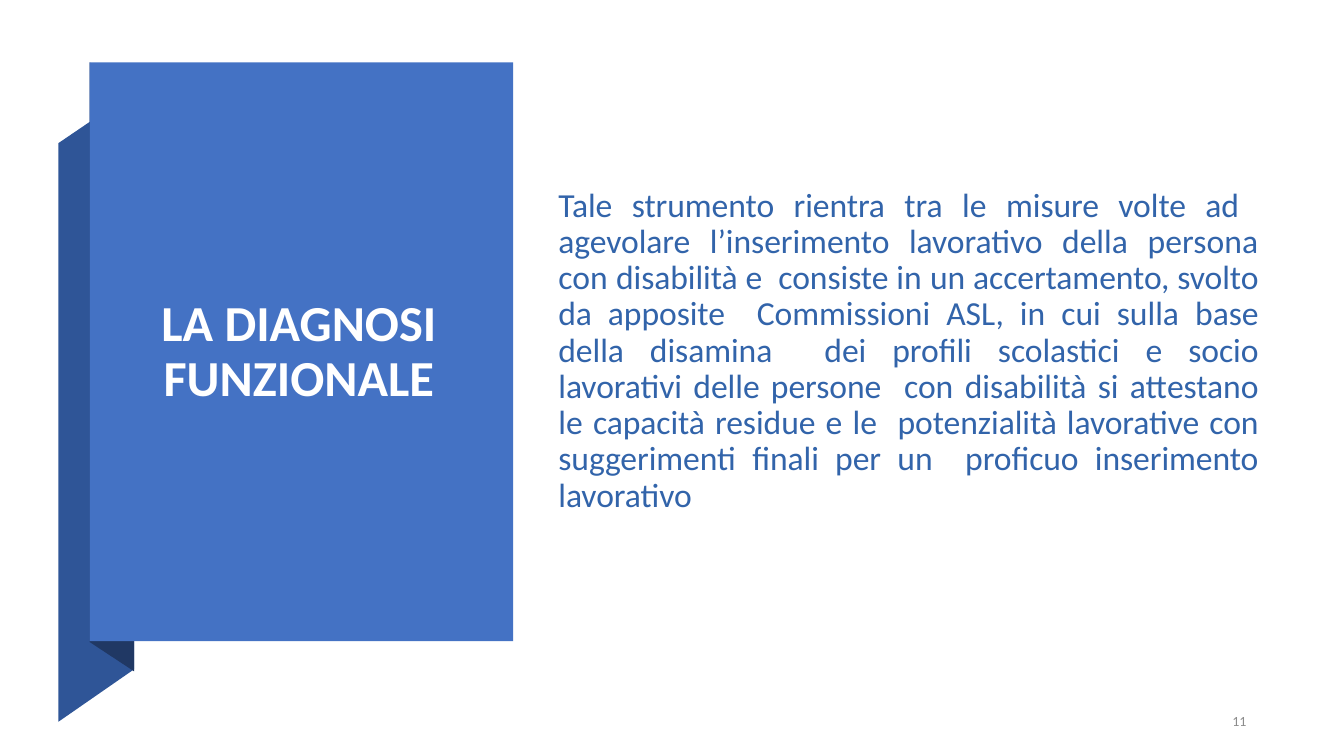
from pptx import Presentation
from pptx.dml.color import RGBColor
from pptx.enum import shapes, text
from pptx.util import Inches, Pt

WHITE = RGBColor(0xFF, 0xFF, 0xFF)
BLUE = RGBColor(0x44, 0x72, 0xC4)
DARK = RGBColor(0x2F, 0x55, 0x97)
NAVY = RGBColor(0x20, 0x38, 0x64)
INK = RGBColor(0x32, 0x64, 0xAA)
GREY = RGBColor(0x8C, 0x8C, 0x8C)

BODY = [
    ("Tale strumento rientra tra ", -5),
    ("le ", 0),
    ("misure volte ad  agevolare l’inserimento lavorativo del", -5),
    ("la persona con ", 5),
    ("disabilità ", -5),
    ("e  ", 0),
    ("consiste ", -5),
    ("in ", 5),
    ("un accertamento, svolto da apposite  Commissioni ", -5),
    ("ASL, in ", 0),
    ("cui ", -5),
    ("sulla ", 0),
    ("base della disamina  dei profili scolastici ", -5),
    ("e ", 0),
    ("socio lavorativi delle persone ", -5),
    (" con ", 0),
    ("disabilità si attestano", -5),
    (" le ", 0),
    ("capacità residue ", -5),
    ("e ", 0),
    ("le  ", 5),
    ("potenzialità lavorative con suggerimenti finali per un  "
     "proficuo inserimento lavorativo", -5),
]


def paint(shape, color):
    """Give a shape a flat fill with no line or shadow."""
    shape.shadow.inherit = False
    shape.fill.solid()
    shape.fill.fore_color.rgb = color
    shape.line.fill.background()


def add_fold(slide, points, color):
    """Draw one folded side of the ribbon."""
    start, *rest = [(Inches(x), Inches(y)) for x, y in points]
    pen = slide.shapes.build_freeform(*start)
    pen.add_line_segments(rest, close=True)
    paint(pen.convert_to_shape(), color)


def add_panel(slide, area, color):
    """Draw a flat rectangle."""
    kind = shapes.MSO_SHAPE.RECTANGLE
    paint(slide.shapes.add_shape(kind, *map(Inches, area)), color)


def add_text(slide, area, runs, size, color, align, bold=False, lines=1.0):
    """Add a wrapped, middle-anchored paragraph of spaced runs."""
    frame = slide.shapes.add_textbox(*map(Inches, area)).text_frame
    frame.word_wrap = True
    frame.vertical_anchor = text.MSO_ANCHOR.MIDDLE
    para = frame.paragraphs[0]
    para.alignment = align
    para.line_spacing = lines
    for words, gap in runs:
        run = para.add_run()
        run.text = words
        font = run.font
        font.name = "Calibri"
        font.size = Pt(size)
        font.bold = bold
        font.color.rgb = color
        if gap:
            run._r.get_or_add_rPr().set("spc", str(gap))


def main():
    """Build and save the slide."""
    deck = Presentation()
    deck.slide_width = Inches(13.33)
    deck.slide_height = Inches(7.5)
    slide = deck.slides.add_slide(deck.slide_layouts[6])
    align = text.PP_ALIGN

    add_panel(slide, (0, 0, 13.33, 7.5), WHITE)
    add_fold(slide, [(0.58, 7.16), (1.33, 6.64), (1.33, 0.91), (0.58, 1.42)], DARK)
    add_fold(slide, [(0.89, 6.37), (1.33, 6.66), (1.33, 0.9), (0.89, 0.62)], NAVY)
    add_panel(slide, (0.89, 0.62, 4.2, 5.74), BLUE)

    add_text(slide, (1.2, 0.97, 3.53, 5.06), [("LA DIAGNOSI FUNZIONALE", 0)],
             36, WHITE, align.CENTER, bold=True, lines=0.9)
    add_text(slide, (5.44, 0.97, 7.14, 5.03), BODY, 24, INK, align.JUSTIFY, lines=0.9)
    add_text(slide, (11.71, 6.98, 0.75, 0.35), [("11", 0)], 10, GREY, align.RIGHT)
    deck.save("out.pptx")


if __name__ == "__main__":
    main()
